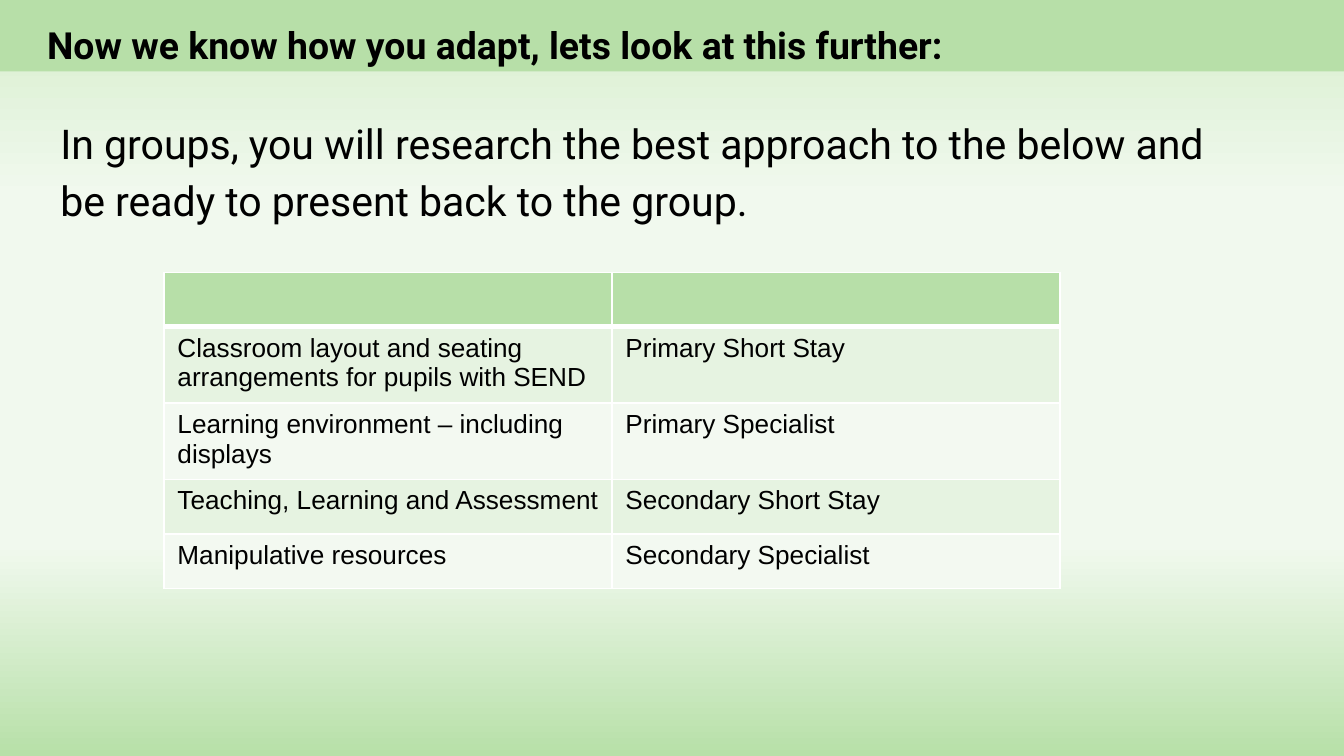
"""Build a slide with a title band, a group task and a topic table."""
from dataclasses import dataclass

from lxml import etree
from pptx import Presentation
from pptx.dml.color import RGBColor
from pptx.enum.shapes import MSO_SHAPE
from pptx.enum.text import MSO_ANCHOR
from pptx.oxml.ns import qn
from pptx.slide import Slide
from pptx.table import _Cell
from pptx.text.text import TextFrame
from pptx.util import Cm, Pt

RECT = MSO_SHAPE.RECTANGLE
TOP = MSO_ANCHOR.TOP
MIDDLE = MSO_ANCHOR.MIDDLE

COLORS = {
    "band": "B7DFA8",
    "odd": "E6F3E1",
    "even": "F3F9F1",
    "line": "FFFFFF",
    "text": "000000",
    "sky": "D5EDCB",
    "mist": "F1F9EE",
    "grass": "B7E0A8",
}
STOPS = [(0, "sky"), (26, "mist"), (72, "mist"), (100, "grass")]
WIDTH, HEIGHT = 25.4, 14.29


@dataclass
class Box:
    left: float
    top: float
    width: float
    height: float

    def place(self) -> tuple:
        """Give the four lengths of the box."""
        return Cm(self.left), Cm(self.top), Cm(self.width), Cm(self.height)


@dataclass
class Topic:
    task: str
    group: str


TOPICS = [
    Topic("Classroom layout and seating arrangements for pupils with SEND", "Primary Short Stay"),
    Topic("Learning environment – including displays", "Primary Specialist"),
    Topic("Teaching, Learning and Assessment", "Secondary Short Stay"),
    Topic("Manipulative resources", "Secondary Specialist"),
]


def tint(name: str) -> RGBColor:
    """Look up a named colour."""
    return RGBColor.from_string(COLORS[name])


def write(frame: TextFrame, text: str, *, size: float, font: str = "Arial",
          bold: bool = False, space: float = 1.0) -> None:
    """Put formatted text in the first paragraph of a frame."""
    para = frame.paragraphs[0]
    para.text = text
    para.line_spacing = space
    para.font.size = Pt(size)
    para.font.name = font
    para.font.bold = bold
    para.font.color.rgb = tint("text")


def add_text(slide: Slide, box: Box, *, anchor: MSO_ANCHOR = TOP,
             indent: float = 0) -> TextFrame:
    """Add a wrapping text box and return its frame."""
    frame = slide.shapes.add_textbox(*box.place()).text_frame
    frame.word_wrap = True
    frame.vertical_anchor = anchor
    frame.margin_left = Cm(indent)
    frame.margin_top = frame.margin_right = frame.margin_bottom = 0
    return frame


def add_band(slide: Slide, box: Box) -> None:
    """Add the plain band behind the title."""
    band = slide.shapes.add_shape(RECT, *box.place())
    band.shadow.inherit = False
    band.fill.solid()
    band.fill.fore_color.rgb = tint("band")
    band.line.fill.background()


def shade(slide: Slide) -> None:
    """Give the slide its vertical gradient."""
    fill = slide.background.fill
    fill.gradient()
    grad = slide.background._cSld.find(".//" + qn("a:gradFill"))
    stops = grad.find(qn("a:gsLst"))
    for old in list(stops):
        stops.remove(old)
    for place, name in STOPS:
        stop = etree.SubElement(stops, qn("a:gs"), pos=str(place * 1000))
        etree.SubElement(stop, qn("a:srgbClr"), val=COLORS[name])
    fill.gradient_angle = 270


def style(cell: _Cell, fill: str, top: float, bottom: float) -> None:
    """Set the fill and the four borders of a cell."""
    cell.fill.solid()
    cell.fill.fore_color.rgb = tint(fill)
    props = cell._tc.get_or_add_tcPr()
    edges = {"a:lnL": 1, "a:lnR": 1, "a:lnT": top, "a:lnB": bottom}
    for spot, (tag, width) in enumerate(edges.items()):
        line = etree.Element(qn(tag), w=str(Pt(width)))
        solid = etree.SubElement(line, qn("a:solidFill"))
        etree.SubElement(solid, qn("a:srgbClr"), val=COLORS["line"])
        props.insert(spot, line)


def add_topics(slide: Slide, box: Box, topics: list[Topic]) -> None:
    """Add the table with an empty header and one row for each topic."""
    rows = [Topic("", "")] + topics
    table = slide.shapes.add_table(len(rows), 2, *box.place()).table
    table.horz_banding = False
    for row, topic in enumerate(rows):
        fill = "band" if row == 0 else "odd" if row % 2 else "even"
        for col, text in enumerate((topic.task, topic.group)):
            cell = table.cell(row, col)
            style(cell, fill, 3 if row == 1 else 1, 3 if row == 0 else 1)
            write(cell.text_frame, text, size=14)


def main() -> None:
    """Build and save the slide."""
    deck = Presentation()
    deck.slide_width, deck.slide_height = Cm(WIDTH), Cm(HEIGHT)
    slide = deck.slides.add_slide(deck.slide_layouts[6])
    shade(slide)
    add_band(slide, Box(0, 0, WIDTH, 1.35))
    task = add_text(slide, Box(0.89, 2.11, 22.89, 8.38), indent=0.25)
    write(task, "In groups, you will research the best approach to the below and "
          "be ready to present back to the group.", size=22, font="Roboto", space=1.15)
    title = add_text(slide, Box(0.89, 0, 21.89, 1.7), anchor=MIDDLE)
    write(title, "Now we know how you adapt, lets look at this further:",
          size=20, font="Roboto", bold=True)
    add_topics(slide, Box(3.1, 5.15, 16.93, 5.15), TOPICS)
    deck.save("out.pptx")


if __name__ == "__main__":
    main()
